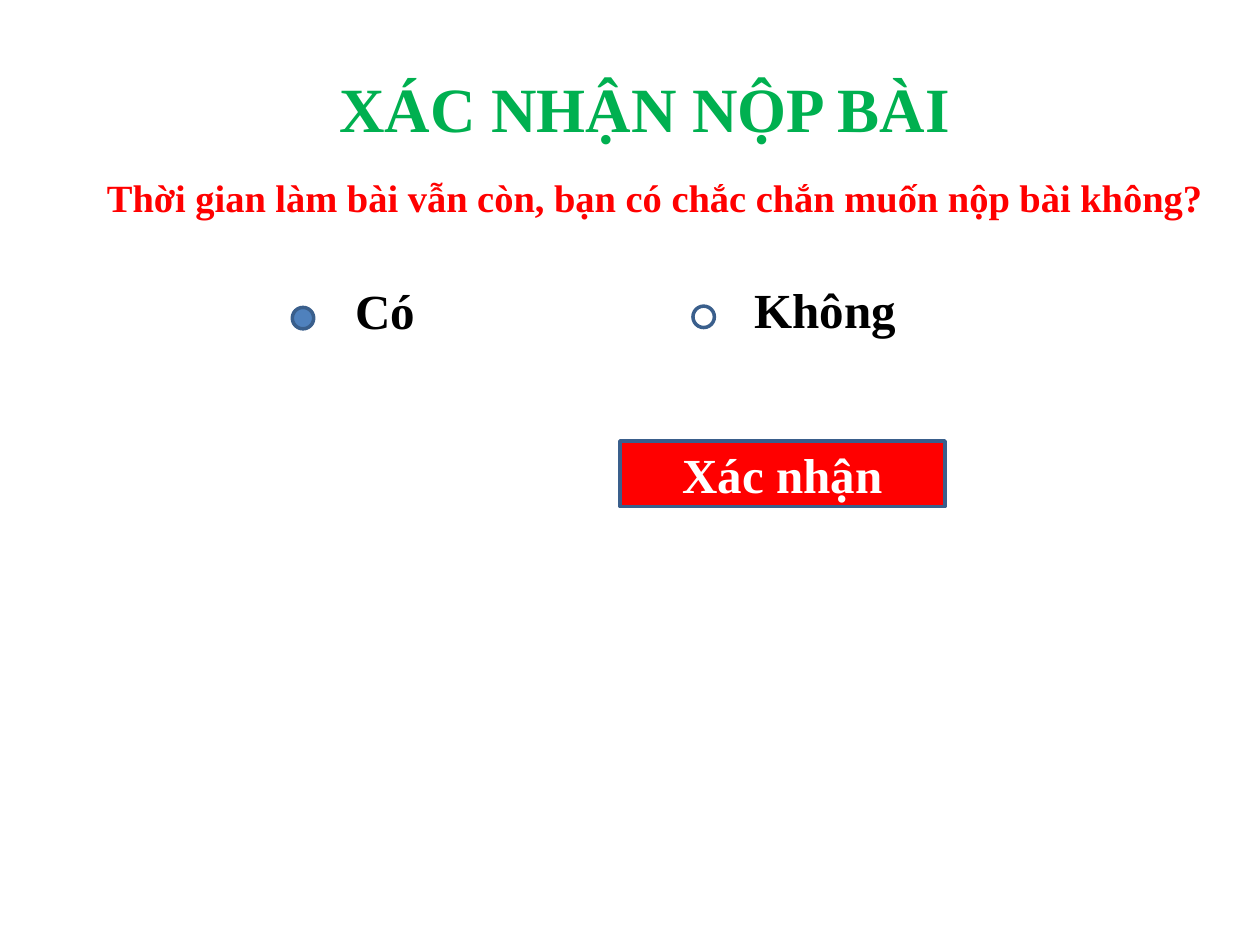
"""Build the slide that asks a student to confirm handing in the test."""
import pptx
import pptx.util
from pptx.dml.color import RGBColor
from pptx.enum.shapes import MSO_SHAPE
from pptx.enum.text import MSO_ANCHOR, MSO_AUTO_SIZE, PP_ALIGN

GREEN = RGBColor(0x00, 0xB0, 0x50)
RED = RGBColor(0xFF, 0x00, 0x00)
BLACK = RGBColor(0x00, 0x00, 0x00)
WHITE = RGBColor(0xFF, 0xFF, 0xFF)
BLUE = RGBColor(0x4F, 0x81, 0xBD)
OUTLINE = RGBColor(0x3A, 0x5F, 0x8C)
FONT = "Times New Roman"

HEADING = "XÁC NHẬN NỘP BÀI"
QUESTION = "Thời gian làm bài vẫn còn, bạn có chắc chắn muốn nộp bài không?"
CONFIRM = "Xác nhận"
OPTIONS = [
    ("Có", BLUE, (2.32, 2.44), (2.72, 2.18, 1.5, 0.57)),
    ("Không", WHITE, (5.5, 2.43), (5.89, 2.17, 1.61, 0.57)),
]
RADIO_SIZE = 0.17


def inches(box):
    return [pptx.util.Inches(length) for length in box]


def write(holder, text, size, color, align=PP_ALIGN.LEFT, anchor=MSO_ANCHOR.TOP):
    frame = holder.text_frame
    frame.text = text
    frame.word_wrap = True
    frame.auto_size = MSO_AUTO_SIZE.NONE
    frame.vertical_anchor = anchor
    paragraph = frame.paragraphs[0]
    paragraph.alignment = align
    font = paragraph.runs[0].font
    font.name, font.size, font.bold = FONT, pptx.util.Pt(size), True
    font.color.rgb = color


def add_outlined(slide, preset, box, fill):
    shape = slide.shapes.add_shape(preset, *inches(box))
    shape.shadow.inherit = False
    shape.fill.solid()
    shape.fill.fore_color.rgb = fill
    shape.line.color.rgb = OUTLINE
    shape.line.width = pptx.util.Pt(2)
    return shape


def main():
    deck = pptx.Presentation()
    deck.slide_width, deck.slide_height = inches((10, 7.5))
    slide = deck.slides.add_slide(deck.slide_layouts.get_by_name("Title Only"))

    heading = slide.shapes.title
    heading.left, heading.top, heading.width, heading.height = inches((2.53, 0.5, 5.17, 0.71))
    write(heading, HEADING, 36, GREEN, PP_ALIGN.CENTER)

    question = slide.shapes.add_textbox(*inches((0.75, 1.33, 8.92, 0.47)))
    write(question, QUESTION, 22, RED)

    for answer, fill, corner, answer_box in OPTIONS:
        add_outlined(slide, MSO_SHAPE.OVAL, (*corner, RADIO_SIZE, RADIO_SIZE), fill)
        write(slide.shapes.add_textbox(*inches(answer_box)), answer, 28, BLACK)

    button = add_outlined(slide, MSO_SHAPE.RECTANGLE, (4.92, 3.5, 2.58, 0.52), RED)
    write(button, CONFIRM, 28, WHITE, PP_ALIGN.CENTER, MSO_ANCHOR.MIDDLE)

    deck.save("out.pptx")


if __name__ == "__main__":
    main()
